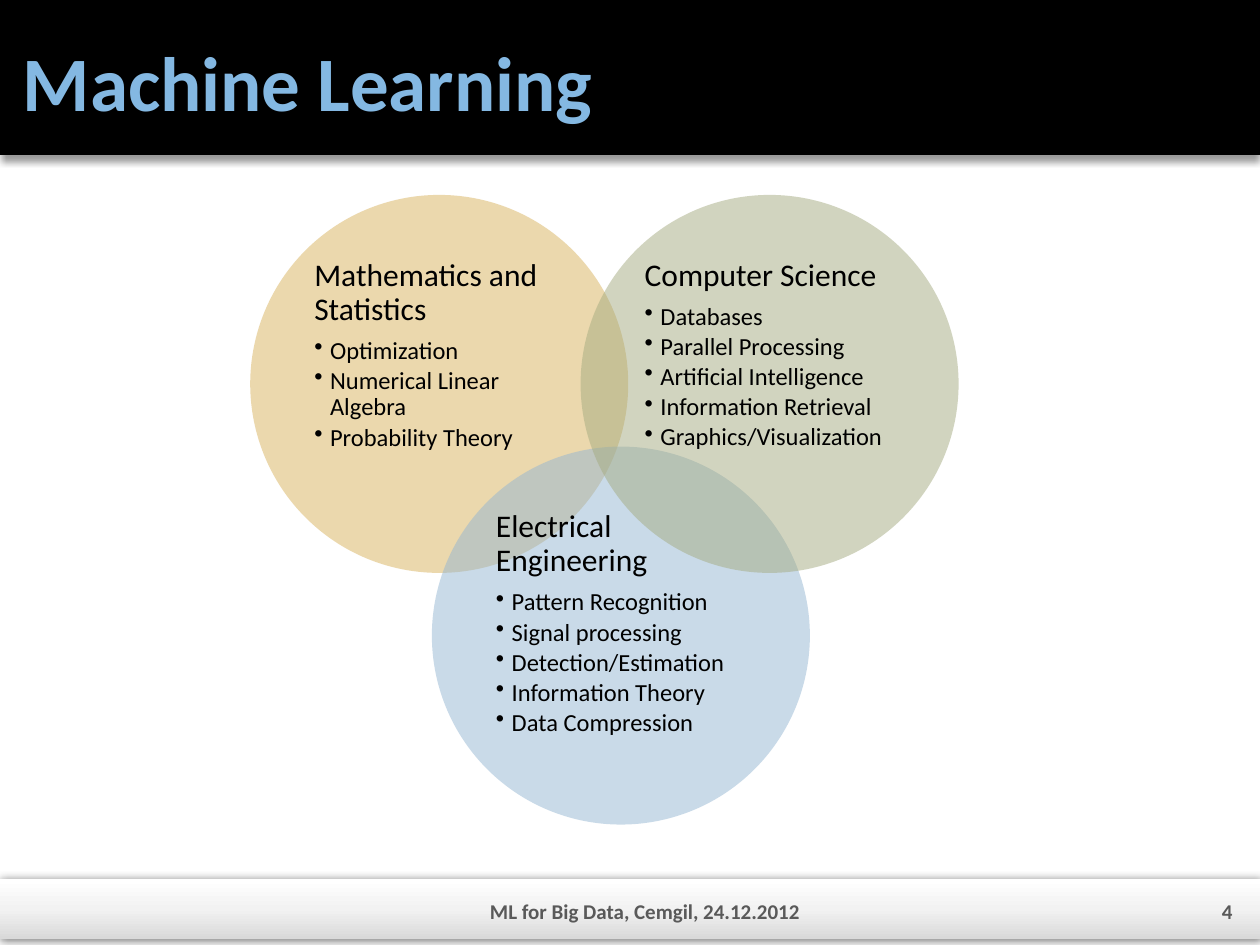
from lxml import etree
from pptx import Presentation
from pptx.dml.color import RGBColor
from pptx.enum import shapes, text
from pptx.oxml import ns
from pptx.util import Pt

BLACK = RGBColor(0, 0, 0)
TITLE_BLUE = RGBColor(0x84, 0xB8, 0xE2)
FOOTER_GREY = RGBColor(0x59, 0x59, 0x59)
SAND = RGBColor(0xD8, 0xB2, 0x5C)
BLUE = RGBColor(0x94, 0xB6, 0xD2)
SAGE = RGBColor(0xA5, 0xAB, 0x81)
SILVER = [(0, RGBColor(0xD9, 0xD9, 0xD9)), (50, RGBColor(0xF2, 0xF2, 0xF2)),
          (100, RGBColor(0xFF, 0xFF, 0xFF))]
FONT = "Calibri"
WIDTH, HEIGHT = 720, 540
DIAMETER = 216

# Heading, bullets, circle colour, left, top; from back to front
FIELDS = [
    ("Mathematics and Statistics",
     ["Optimization", "Numerical Linear Algebra", "Probability Theory"],
     SAND, 143, 111.4),
    ("Electrical Engineering",
     ["Pattern Recognition", "Signal processing", "Detection/Estimation",
      "Information Theory", "Data Compression"],
     BLUE, 246.8, 255.2),
    ("Computer Science",
     ["Databases", "Parallel Processing", "Artificial Intelligence",
      "Information Retrieval", "Graphics/Visualization"],
     SAGE, 331.8, 111.4),
]


def add_xml(parent, tag, **attrs):
    return etree.SubElement(parent, ns.qn(tag), {k: str(v) for k, v in attrs.items()})


def add_color(parent, color, alpha=100):
    clr = add_xml(parent, "a:srgbClr", val=color)
    if alpha < 100:
        add_xml(clr, "a:alpha", val=alpha * 1000)


def plain_shape(slide, kind, box):
    sp = slide.shapes.add_shape(kind, *map(Pt, box))
    sp.shadow.inherit = False
    sp.line.fill.background()
    return sp


def add_shadow(sp, alpha, blur, dist, angle):
    effects = sp._element.spPr.find(ns.qn("a:effectLst"))
    shadow = add_xml(effects, "a:outerShdw", blurRad=Pt(blur), dist=Pt(dist),
                     dir=angle * 60000, algn="ctr", rotWithShape=0)
    add_color(shadow, BLACK, alpha)


def format_font(font, size, color, bold=False):
    font.name, font.size, font.bold = FONT, Pt(size), bold
    font.color.rgb = color


def set_insets(tf, left, top, right, bottom):
    tf.margin_left, tf.margin_top = Pt(left), Pt(top)
    tf.margin_right, tf.margin_bottom = Pt(right), Pt(bottom)
    tf.word_wrap = True
    tf.auto_size = text.MSO_AUTO_SIZE.NONE


def add_header(slide, box, title):
    left, top, width, height = box
    band = plain_shape(slide, shapes.MSO_SHAPE.RECTANGLE, box)
    band.fill.solid()
    band.fill.fore_color.rgb = BLACK
    add_shadow(band, 40, 4, 3, 90)

    # Title, brought in front of the band
    sp = slide.shapes.title
    slide.shapes._spTree.append(sp._element)
    sp.left, sp.top = Pt(left + 5.8), Pt(top + 9.4)
    sp.width, sp.height = Pt(width - 14.4), Pt(height - 15.2)
    tf = sp.text_frame
    tf.text = title
    set_insets(tf, 7.2, 3.6, 3.6, 3.6)
    tf.vertical_anchor = text.MSO_ANCHOR.MIDDLE
    p = tf.paragraphs[0]
    p.alignment = text.PP_ALIGN.LEFT
    format_font(p.runs[0].font, 44, TITLE_BLUE, True)


def add_footer(slide, box, caption, number):
    left, top, _, _ = box
    band = plain_shape(slide, shapes.MSO_SHAPE.RECTANGLE, box)
    band.fill.gradient()
    band.fill.gradient_angle = 90
    stops = band._element.spPr.find(".//" + ns.qn("a:gsLst"))
    stops.clear()
    for pos, color in SILVER:
        add_color(add_xml(stops, "a:gs", pos=pos * 1000), color)
    add_shadow(band, 50, 5, 0, 0)

    # Caption and slide number
    for content, x, width, inset, align in (
            (caption, 87.8, 561.6, 3.6, text.PP_ALIGN.CENTER),
            (number, 653.8, 57.6, 7.2, text.PP_ALIGN.RIGHT)):
        sp = slide.shapes.add_textbox(Pt(left + x), Pt(top + 5.8), Pt(width), Pt(21.6))
        tf = sp.text_frame
        tf.text = content
        set_insets(tf, inset, 3.6, inset, 0)
        tf.vertical_anchor = text.MSO_ANCHOR.MIDDLE
        p = tf.paragraphs[0]
        p.alignment = align
        format_font(p.runs[0].font, 12, FOOTER_GREY, True)


def add_field(slide, box, heading, bullets, color):
    left, top, width, height = box
    circle = plain_shape(slide, shapes.MSO_SHAPE.OVAL, box)
    circle.fill.solid()
    circle.fill.fore_color.rgb = color
    clr = circle._element.spPr.find(".//" + ns.qn("a:srgbClr"))
    add_xml(clr, "a:alpha", val=50000)

    # Text in the square inscribed in the circle
    inset = width * (1 - 0.5 ** 0.5) / 2
    sp = slide.shapes.add_textbox(Pt(left + inset), Pt(top + inset),
                                  Pt(width - 2 * inset), Pt(height - 2 * inset))
    tf = sp.text_frame
    set_insets(tf, 5, 5, 5, 5)
    p = tf.paragraphs[0]
    p.text = heading
    p.line_spacing, p.space_after = 0.9, Pt(6.3)
    format_font(p.runs[0].font, 18, BLACK)
    for item in bullets:
        p = tf.add_paragraph()
        p.text = item
        p.level = 1
        p.line_spacing, p.space_after = 0.9, Pt(2.1)
        pPr = p._p.get_or_add_pPr()
        pPr.set("marL", str(Pt(9)))
        pPr.set("indent", str(Pt(-9)))
        add_xml(pPr, "a:buChar", char="•")
        format_font(p.runs[0].font, 14, BLACK)


def main():
    prs = Presentation()
    prs.slide_width, prs.slide_height = Pt(WIDTH), Pt(HEIGHT)
    slide = prs.slides.add_slide(prs.slide_layouts[5])
    add_header(slide, (0, 0, WIDTH, 88.6), "Machine Learning")
    add_footer(slide, (0, 502.5, WIDTH, 33.9), "ML for Big Data, Cemgil, 24.12.2012", "4")
    for heading, bullets, color, left, top in FIELDS:
        add_field(slide, (left, top, DIAMETER, DIAMETER), heading, bullets, color)
    prs.save("out.pptx")


if __name__ == "__main__":
    main()
